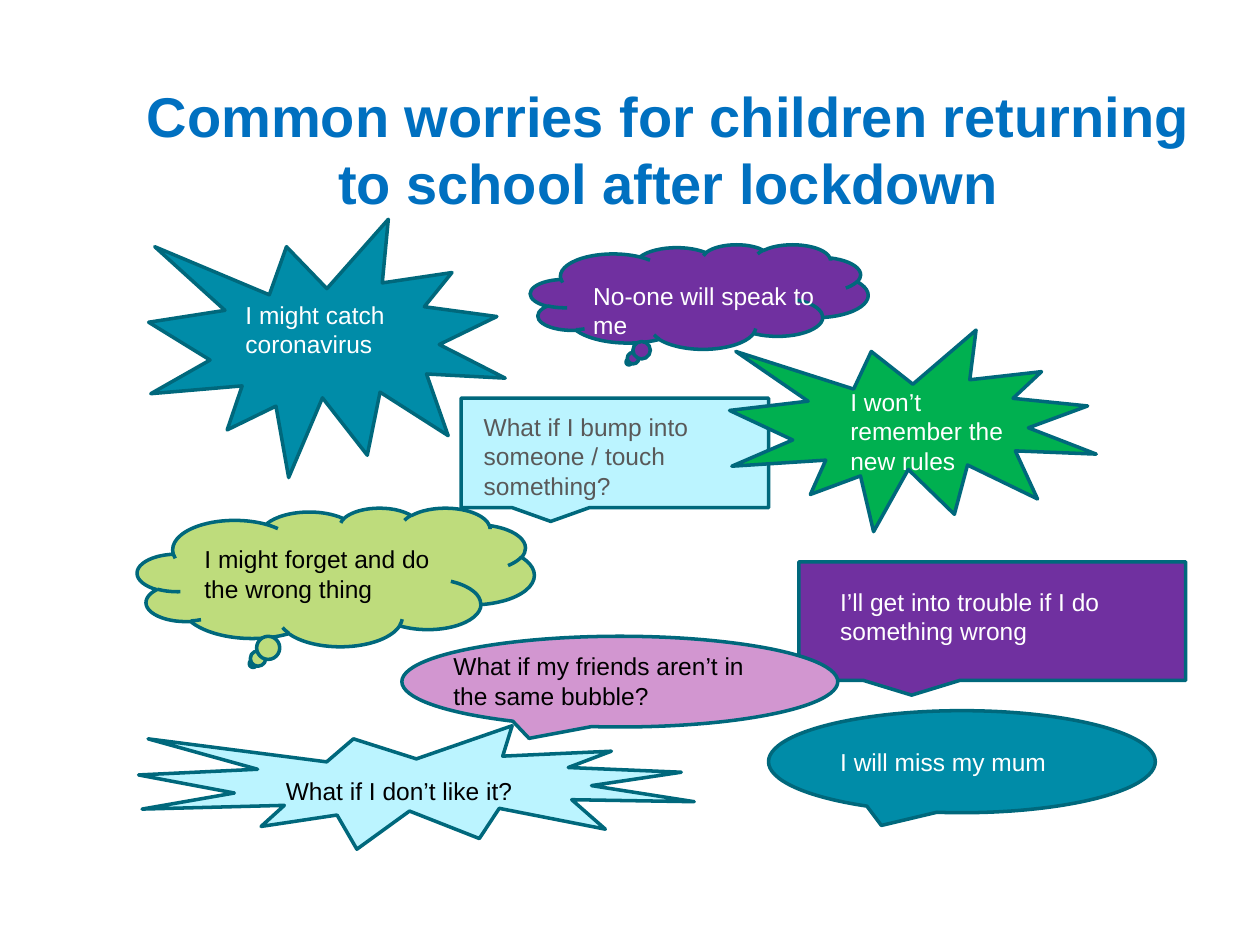
from pptx import Presentation
from pptx.dml.color import RGBColor
from pptx.enum.shapes import MSO_SHAPE
from pptx.enum.text import MSO_ANCHOR, PP_ALIGN
from pptx.util import Inches, Pt

TITLE = "Common worries for children returning to school after lockdown"
TITLE_BOX = (0.98, 0.76, 8.65, 0.84)

BURST = MSO_SHAPE.EXPLOSION1
CLOUD = MSO_SHAPE.CLOUD_CALLOUT
SPEECH_BOX = MSO_SHAPE.RECTANGULAR_CALLOUT
SPEECH_OVAL = MSO_SHAPE.OVAL_CALLOUT

TEAL, PALE, PURPLE = "008CA8", "BBF4FF", "7030A0"
WHITE, BLACK, GREY = "FFFFFF", "000000", "595959"
OUTLINE = "00687C"

# Back to front: bubble kind, bubble box, fill, worry, text box, text colour.
# A text box of None puts the worry inside the bubble itself.
WORRIES = [
    (BURST, (1.18, 1.74, 2.83, 2.05), TEAL,
     "I might catch coronavirus", (1.85, 2.33, 1.5, 0.57), WHITE),
    (SPEECH_BOX, (3.66, 3.16, 2.44, 0.87), PALE,
     "What if I bump into someone / touch something?", (3.74, 3.22, 2.28, 0.81), GREY),
    (CLOUD, (4.21, 1.94, 2.68, 0.83), PURPLE,
     "No-one will speak to me", (4.61, 2.18, 1.97, 0.57), WHITE),
    (BURST, (5.79, 2.62, 2.91, 1.6), "00B050",
     "I won’t remember the new rules", (6.65, 3.02, 1.5, 0.81), WHITE),
    (CLOUD, (1.09, 4.03, 3.15, 1.1), "BEDC7C",
     "I might forget and do the wrong thing", None, BLACK),
    (SPEECH_BOX, (6.34, 4.46, 3.07, 0.94), PURPLE,
     "I’ll get into trouble if I do something wrong", (6.57, 4.61, 2.76, 0.57), WHITE),
    (SPEECH_OVAL, (3.19, 5.05, 3.46, 0.72), "D296D0",
     "What if my friends aren’t in the same bubble?", (3.5, 5.12, 2.83, 0.57), BLACK),
    (BURST, (1.1, 5.76, 4.41, 0.98), PALE,
     "What if I don’t like it?", (2.17, 6.11, 2.36, 0.34), BLACK),
    (SPEECH_OVAL, (6.1, 5.64, 3.07, 0.81), TEAL,
     "I will miss my mum", (6.57, 5.88, 2.13, 0.34), WHITE),
]


def color(value):
    return RGBColor.from_string(value)


def inches(box):
    return [Inches(length) for length in box]


def write(shape, text, size, ink, bold=False,
          align=PP_ALIGN.LEFT, anchor=MSO_ANCHOR.TOP):
    frame = shape.text_frame
    frame.word_wrap = True
    frame.vertical_anchor = anchor
    para = frame.paragraphs[0]
    para.text = text
    para.alignment = align
    para.font.name = "Arial"
    para.font.size = Pt(size)
    para.font.bold = bold
    para.font.color.rgb = color(ink)


def add_bubble(page, kind, box, fill):
    bubble = page.shapes.add_shape(kind, *inches(box))
    bubble.shadow.inherit = False
    bubble.fill.solid()
    bubble.fill.fore_color.rgb = color(fill)
    bubble.line.color.rgb = color(OUTLINE)
    bubble.line.width = Pt(2)
    return bubble


def main():
    deck = Presentation()
    deck.slide_width, deck.slide_height = Inches(10), Inches(7.5)
    page = deck.slides.add_slide(deck.slide_layouts[6])

    # Title
    title = page.shapes.add_textbox(*inches(TITLE_BOX))
    write(title, TITLE, 32, "0070C0", True, PP_ALIGN.CENTER, MSO_ANCHOR.MIDDLE)

    # Worries
    for kind, box, fill, worry, text_box, ink in WORRIES:
        bubble = add_bubble(page, kind, box, fill)
        if text_box:
            write(page.shapes.add_textbox(*inches(text_box)), worry, 14, ink)
        else:
            write(bubble, worry, 14, ink, anchor=MSO_ANCHOR.MIDDLE)

    deck.save("out.pptx")


if __name__ == "__main__":
    main()
